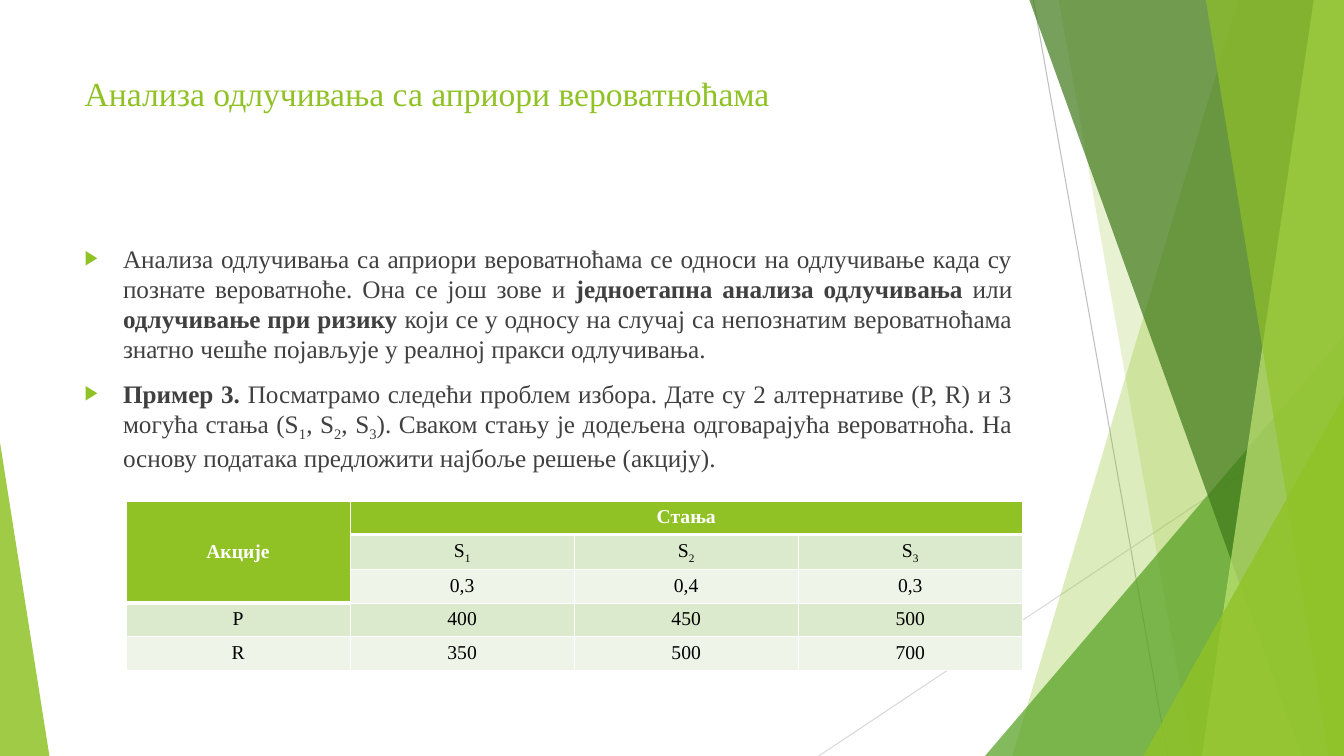
from lxml.etree import SubElement
from pptx import Presentation
from pptx.dml.color import RGBColor
from pptx.enum.shapes import MSO_CONNECTOR, MSO_SHAPE
from pptx.enum.text import MSO_ANCHOR, MSO_AUTO_SIZE, PP_ALIGN
from pptx.oxml.ns import qn
from pptx.util import Inches, Pt

GREEN = RGBColor(0x90, 0xC2, 0x26)
MID_GREEN = RGBColor(0x54, 0xA0, 0x21)
DARK_GREEN = RGBColor(0x3F, 0x78, 0x19)
LIME = RGBColor(0xC0, 0xE4, 0x74)
GRAY = RGBColor(0xBF, 0xBF, 0xBF)
LIGHT_GRAY = RGBColor(0xD9, 0xD9, 0xD9)
TEXT = RGBColor(0x40, 0x40, 0x40)
BLACK = RGBColor(0, 0, 0)
WHITE = RGBColor(0xFF, 0xFF, 0xFF)
BAND = RGBColor(0xDB, 0xE9, 0xCD)
PALE_BAND = RGBColor(0xEE, 0xF4, 0xE8)


class SlideBuilder:
    """Holds the style and the current slide, and adds elements to it."""

    font = "Times New Roman"

    def __init__(self, prs):
        self.s = prs.slides.add_slide(prs.slide_layouts[1])

    def line(self, start, end, color):
        c = self.s.shapes.add_connector(
            MSO_CONNECTOR.STRAIGHT, *[Inches(v) for v in start + end])
        c.line.color.rgb = color
        c.line.width = Pt(0.75)
        SubElement(c.element.spPr, qn("a:effectLst"))

    def paint(self, sp, color, alpha):
        sp.shadow.inherit = False
        sp.fill.solid()
        sp.fill.fore_color.rgb = color
        sp.line.fill.background()
        clr = sp.element.spPr.find(qn("a:solidFill"))[0]
        SubElement(clr, qn("a:alpha"), val=str(alpha * 1000))

    def shard(self, top, bottom, color, alpha):
        corners = [(top, 0), (13.33, 0), (13.33, 7.5), (bottom, 7.5)]
        pts = [(Inches(x), Inches(y)) for x, y in corners]
        fb = self.s.shapes.build_freeform(*pts[0], scale=1.0)
        fb.add_line_segments(pts[1:], close=True)
        self.paint(fb.convert_to_shape(), color, alpha)

    def triangle(self, box, apex, color, alpha):
        sp = self.s.shapes.add_shape(
            MSO_SHAPE.ISOSCELES_TRIANGLE, *[Inches(v) for v in box])
        sp.adjustments[0] = apex
        self.paint(sp, color, alpha)

    def add_runs(self, p, runs, align, size, color):
        p.alignment = align
        for text, kind in runs:
            r = p.add_run()
            r.text = text
            r.font.color.rgb = color
            values = {"name": self.font, "size": Pt(size),
                      "bold": kind == "bold"}
            for name, value in values.items():
                setattr(r.font, name, value)
            if kind == "sub":
                r._r.get_or_add_rPr().set("baseline", "-25000")

    def placeholder(self, idx, box):
        sp = self.s.placeholders[idx]
        for name, value in zip(("left", "top", "width", "height"), box):
            setattr(sp, name, Inches(value))
        tf = sp.text_frame
        for name, value in {"word_wrap": True, "auto_size": MSO_AUTO_SIZE.NONE,
                            "vertical_anchor": MSO_ANCHOR.TOP}.items():
            setattr(tf, name, value)
        sp.element.getparent().append(sp.element)
        return tf

    def title(self, text, box):
        tf = self.placeholder(0, box)
        self.add_runs(tf.paragraphs[0], [(text, "")], PP_ALIGN.LEFT, 24, GREEN)

    def bullets(self, items, box):
        tf = self.placeholder(1, box)
        for i, runs in enumerate(items):
            p = tf.add_paragraph() if i else tf.paragraphs[0]
            self.add_runs(p, runs, PP_ALIGN.JUSTIFY, 18, TEXT)
            p.space_before = Pt(10)
            pPr = p._p.get_or_add_pPr()
            pPr.set("marL", str(Inches(0.38)))
            pPr.set("indent", str(-Inches(0.38)))
            clr = SubElement(pPr, qn("a:buClr"))
            SubElement(clr, qn("a:srgbClr"), val=str(GREEN))
            SubElement(pPr, qn("a:buSzPct"), val="80000")
            SubElement(pPr, qn("a:buChar"), char="▶")

    def borders(self, cell, thick):
        tcPr = cell._tc.get_or_add_tcPr()
        for side in "LRTB":
            width = Pt(3 if side == thick else 1)
            ln = SubElement(tcPr, qn(f"a:ln{side}"), w=str(width))
            fill = SubElement(ln, qn("a:solidFill"))
            SubElement(fill, qn("a:srgbClr"), val=str(WHITE))

    def table(self, rows, box):
        n_rows, n_cols = len(rows), len(rows[0])
        tbl = self.s.shapes.add_table(
            n_rows, n_cols, *[Inches(v) for v in box]).table
        tbl.cell(0, 0).merge(tbl.cell(2, 0))
        tbl.cell(0, 1).merge(tbl.cell(0, n_cols - 1))
        for i, row in enumerate(rows):
            for j, runs in enumerate(row):
                cell = tbl.cell(i, j)
                head_end = 0 if j else 2
                header = i <= head_end
                thick = "B" if header else "T" if i == head_end + 1 else ""
                self.borders(cell, thick)
                cell.fill.solid()
                cell.fill.fore_color.rgb = (
                    GREEN if header else BAND if i % 2 else PALE_BAND)
                cell.vertical_anchor = (
                    MSO_ANCHOR.MIDDLE if header and not j else MSO_ANCHOR.TOP)
                self.add_runs(cell.text_frame.paragraphs[0], runs,
                              PP_ALIGN.CENTER, 14, WHITE if header else BLACK)


def main():
    prs = Presentation()
    prs.slide_width, prs.slide_height = Inches(13.33), Inches(7.5)
    b = SlideBuilder(prs)

    b.line((10.25, 0), (11.58, 7.5), GRAY)
    b.line((13.33, 4.03), (8.12, 7.5), LIGHT_GRAY)
    b.shard(12.28, 10.04, GREEN, 30)
    b.shard(10.5, 11.83, GREEN, 20)
    b.triangle((9.77, 3.33, 3.56, 4.17), 1, MID_GREEN, 72)
    b.shard(10.21, 12.91, DARK_GREEN, 70)
    b.shard(13.03, 11.92, LIME, 70)
    b.shard(11.96, 13.18, GREEN, 65)
    b.triangle((11.34, 3.93, 1.99, 3.57), 1, GREEN, 80)
    b.triangle((0, 4.39, 0.49, 3.11), 0, GREEN, 85)

    b.title("Анализа одлучивања са априори вероватноћама",
            (0.74, 0.67, 9.4, 1.44))
    b.bullets([
        [("Анализа одлучивања са априори вероватноћама се односи на "
          "одлучивање када су познате вероватноће. Она се још зове и ", ""),
         ("једноетапна анализа одлучивања", "bold"), (" или ", ""),
         ("одлучивање при ризику", "bold"),
         (" који се у односу на случај са непознатим вероватноћама знатно "
          "чешће појављује у реалној пракси одлучивања. ", "")],
        [("Пример 3. ", "bold"),
         ("Посматрамо следећи проблем избора. Дате су 2 алтернативе (P, R) "
          "и 3 могућа стања (S", ""), ("1", "sub"), (", S", ""),
         ("2", "sub"), (", S", ""), ("3", "sub"),
         ("). Сваком стању је додељена одговарајућа вероватноћа. На основу "
          "података предложити најбоље решење (акцију).", "")],
    ], (0.74, 2.36, 9.4, 4.24))

    states = [[("S", ""), (n, "sub")] for n in "123"]
    values = [["", "0,3", "0,4", "0,3"],
              ["P", "400", "450", "500"],
              ["R", "350", "500", "700"]]
    b.table([[[("Акције", "bold")], [("Стања", "bold")], [], []],
             [[], *states],
             *[[[(v, "")] if v else [] for v in row] for row in values]],
            (1.25, 4.97, 8.89, 1.67))
    prs.save("out.pptx")


if __name__ == "__main__":
    main()
